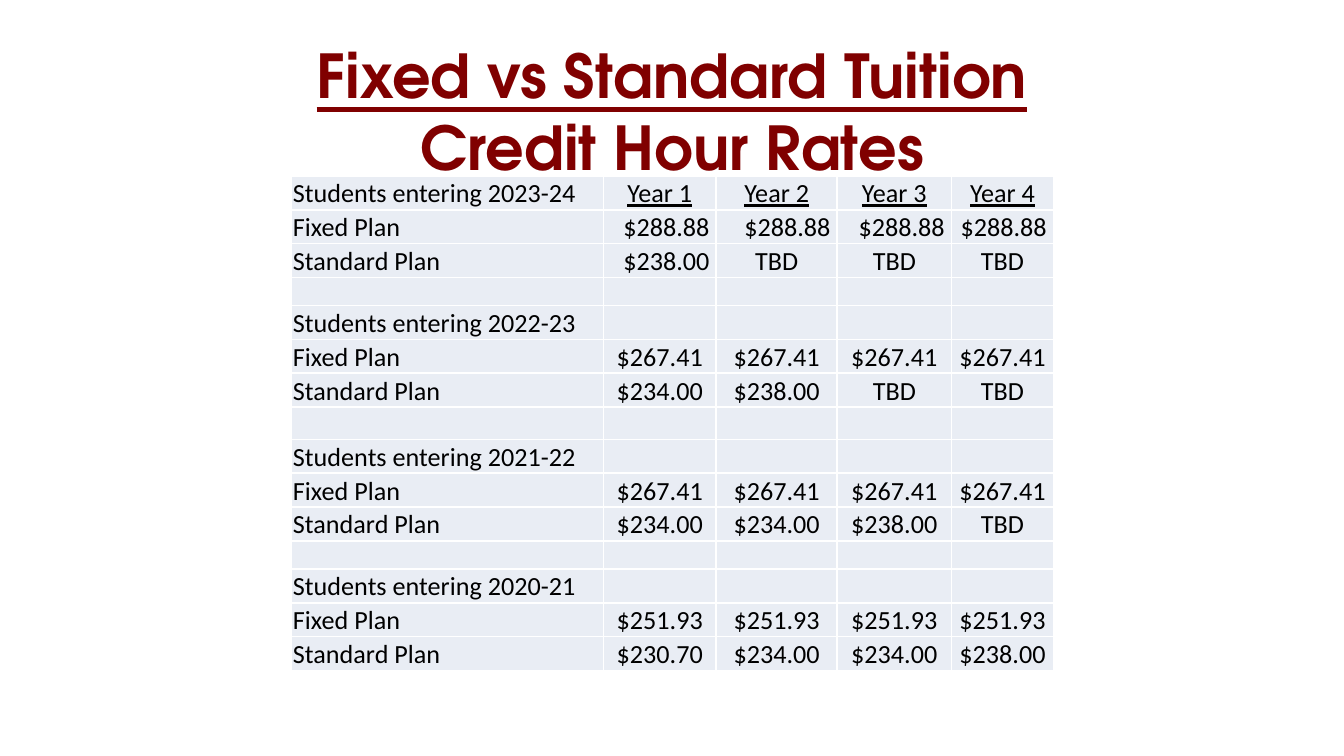
from lxml import etree
from pptx import Presentation
from pptx import util as u
from pptx.dml.color import RGBColor
from pptx.enum import text
from pptx.oxml import ns

MAROON = RGBColor(0x80, 0x00, 0x00)
BLACK = RGBColor(0x00, 0x00, 0x00)
WHITE = RGBColor(0xFF, 0xFF, 0xFF)
PALE_BLUE = RGBColor(0xE9, 0xED, 0xF4)
LEFT, CENTER, RIGHT = text.PP_ALIGN.LEFT, text.PP_ALIGN.CENTER, text.PP_ALIGN.RIGHT

COLUMN_WIDTHS = [2.32, 0.84, 0.9, 0.85, 0.76]
GAP_HEIGHTS = {3: 0.21, 7: 0.24, 11: 0.21}
YEARS = ["Year 1", "Year 2", "Year 3", "Year 4"]
COHORTS = [
    ("2023-24", ["$288.88"] * 4, ["$238.00", "TBD", "TBD", "TBD"]),
    ("2022-23", ["$267.41"] * 4, ["$234.00", "$238.00", "TBD", "TBD"]),
    ("2021-22", ["$267.41"] * 4, ["$234.00", "$234.00", "$238.00", "TBD"]),
    ("2020-21", ["$251.93"] * 4, ["$230.70", "$234.00", "$234.00", "$238.00"]),
]


def add_text(paragraph, wording, size=14, font="Calibri", color=BLACK,
             bold=False, underline=False, align=LEFT):
    """Append a formatted run to a paragraph."""
    paragraph.alignment = align
    run = paragraph.add_run()
    run.text = wording
    run.font.size = u.Pt(size)
    run.font.name = font
    run.font.color.rgb = color
    run.font.bold = bold
    run.font.underline = underline


def add_heading(slide, left, top, width, height):
    """Fill the title placeholder with the two-line heading."""
    heading = slide.shapes.title
    heading.left, heading.top = u.Inches(left), u.Inches(top)
    heading.width, heading.height = u.Inches(width), u.Inches(height)
    frame = heading.text_frame
    frame.word_wrap = True
    frame.auto_size = text.MSO_AUTO_SIZE.NONE
    frame.vertical_anchor = text.MSO_ANCHOR.TOP
    line = frame.paragraphs[0]
    style = dict(size=32.4, font="TeX Gyre Adventor", color=MAROON, bold=True, align=CENTER)
    add_text(line, "Fixed vs Standard Tuition", underline=True, **style)
    line.add_line_break()
    add_text(line, "Credit Hour Rates", **style)


def style_cell(cell):
    """Give a cell its fill, insets, anchor and white borders."""
    cell.fill.solid()
    cell.fill.fore_color.rgb = PALE_BLUE
    cell.margin_left = cell.margin_right = cell.margin_top = u.Inches(0.01)
    cell.margin_bottom = 0
    cell.vertical_anchor = text.MSO_ANCHOR.BOTTOM
    properties = cell._tc.get_or_add_tcPr()
    for position, side in enumerate(("lnL", "lnR", "lnT", "lnB")):
        border = etree.Element(ns.qn(f"a:{side}"), w=str(u.Pt(1)))
        fill = etree.SubElement(border, ns.qn("a:solidFill"))
        etree.SubElement(fill, ns.qn("a:srgbClr"), val=str(WHITE))
        properties.insert(position, border)


def rate_rows():
    """List the table's rows, with an empty row between cohorts."""
    rows = []
    for number, (entry, fixed, standard) in enumerate(COHORTS):
        if number:
            rows.append([""] * 5)
        rows.append([f"Students entering {entry}"] + (["" for _ in YEARS] if number else YEARS))
        rows.append(["Fixed Plan"] + fixed)
        rows.append(["Standard Plan"] + standard)
    return rows


def add_rates(slide, left, top, height):
    """Place the table of credit hour rates."""
    rows = rate_rows()
    text_height = (height - sum(GAP_HEIGHTS.values())) / (len(rows) - len(GAP_HEIGHTS))
    rates = slide.shapes.add_table(
        len(rows), len(COLUMN_WIDTHS), u.Inches(left), u.Inches(top),
        u.Inches(sum(COLUMN_WIDTHS)), u.Inches(height)).table
    rates.first_row = rates.horz_banding = False
    for column, width in zip(rates.columns, COLUMN_WIDTHS):
        column.width = u.Inches(width)
    for r, row in enumerate(rows):
        rates.rows[r].height = u.Inches(GAP_HEIGHTS.get(r, text_height))
        for c, wording in enumerate(row):
            cell = rates.cell(r, c)
            style_cell(cell)
            paragraph = cell.text_frame.paragraphs[0]
            if not wording:
                etree.SubElement(paragraph._p, ns.qn("a:endParaRPr"), sz="1000")
                continue
            align = CENTER if c else LEFT
            if r in (1, 2) and wording.startswith("$"):
                align = RIGHT
                cell.margin_right = u.Inches(0.05)
            add_text(paragraph, wording, underline=wording in YEARS, align=align)


def main():
    """Build and save the tuition slide."""
    deck = Presentation()
    deck.slide_width = u.Inches(10)
    deck.slide_height = deck.slide_width * 9 // 16
    slide = deck.slides.add_slide(deck.slide_layouts[5])
    add_heading(slide, 0.5, 0.23, 9, 0.94)
    add_rates(slide, 2.17, 1.31, 3.68)
    deck.save("out.pptx")


if __name__ == "__main__":
    main()
